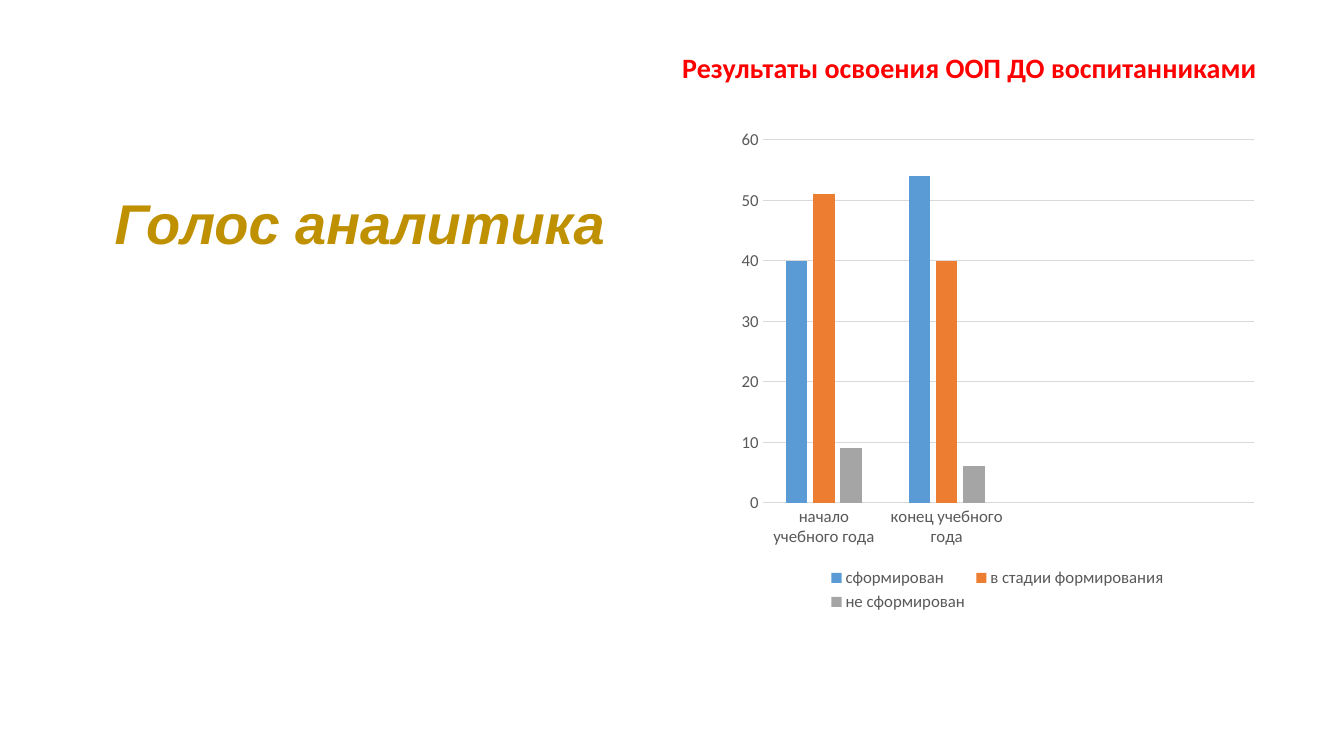
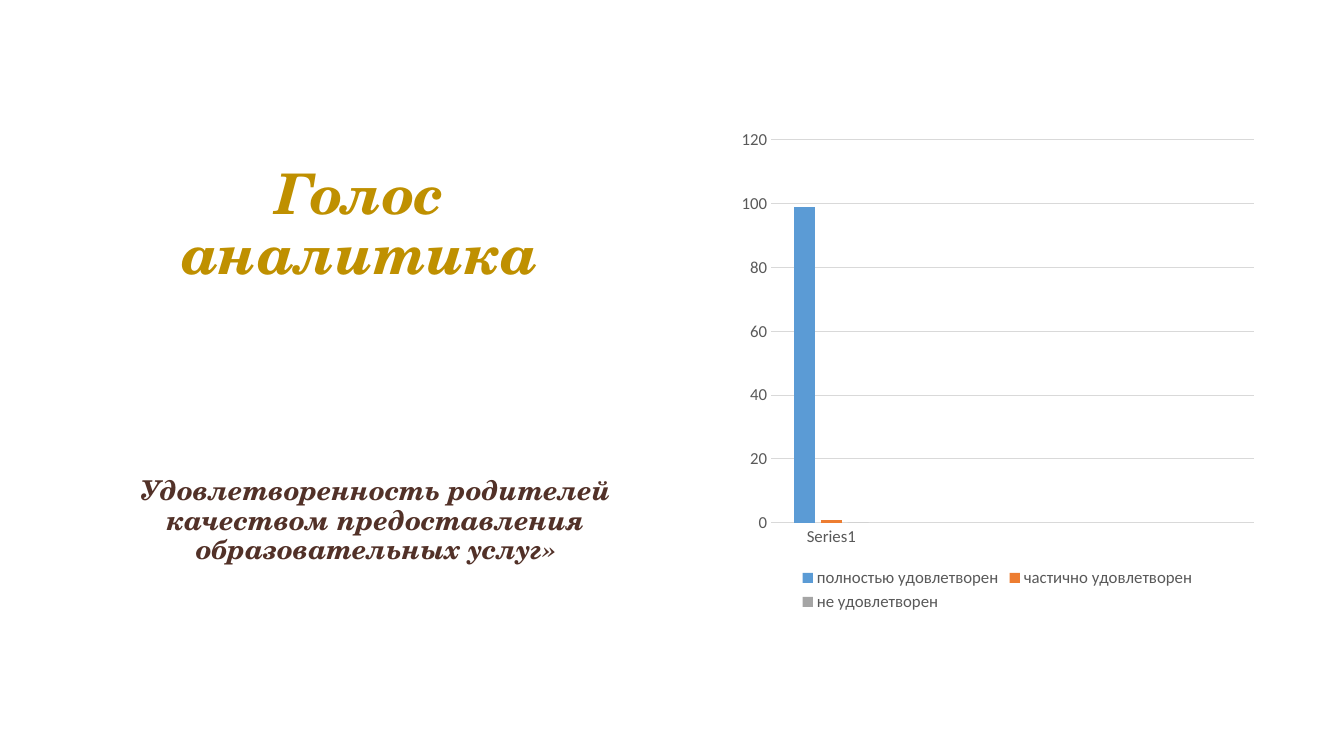
from lxml import etree
from pptx import Presentation
from pptx import util as u
from pptx.chart import data
from pptx.dml.color import RGBColor
from pptx.enum import chart as charts, text
from pptx.oxml import ns

COLOURS = {
    "title": "BF9000",
    "outline": "5A4012",
    "subtitle": "523128",
    "heading": "FF0000",
    "axis": "595959",
    "grid": "D9D9D9",
}
SERIES_COLOURS = ["5B9BD5", "ED7D31", "A5A5A5"]


def rgb(name):
    return RGBColor.from_string(COLOURS.get(name, name))


class Deck:
    body_font = "Calibri"
    panel_width, panel_height = u.Cm(14.12), u.Cm(3.68)

    def __init__(self):
        self.presentation = Presentation()
        self.presentation.slide_width = u.Cm(33.87)
        self.presentation.slide_height = u.Cm(19.05)
        self.slide = None

    def add_slide(self):
        layout = self.presentation.slide_layouts[6]
        self.slide = self.presentation.slides.add_slide(layout)

    def add_text(self, left, top, width, height, words, font, size, colour):
        shape = self.slide.shapes.add_textbox(left, top, width, height)
        paragraph = shape.text_frame.paragraphs[0]
        run = paragraph.add_run()
        run.text = words
        run.font.name = font
        run.font.size = u.Pt(size)
        run.font.bold = True
        run.font.color.rgb = rgb(colour)
        return shape.text_frame, paragraph, run

    def add_panel(self, left, top, words, font, size, colour):
        frame, paragraph, run = self.add_text(
            left, top, self.panel_width, self.panel_height, words, font, size, colour)
        frame.word_wrap = True
        frame.vertical_anchor = text.MSO_ANCHOR.MIDDLE
        paragraph.alignment = text.PP_ALIGN.CENTER
        paragraph.line_spacing = 0.9
        run.font.italic = True
        line = etree.Element(ns.qn("a:ln"), w=str(u.Pt(0.5)))
        fill = etree.SubElement(line, ns.qn("a:solidFill"))
        etree.SubElement(fill, ns.qn("a:srgbClr"), val=COLOURS["outline"])
        run.font._element.insert(0, line)

    def add_title(self, font):
        self.add_panel(u.Cm(2.01), u.Cm(3.86), "Голос аналитика", font, 40, "title")

    def add_heading(self, words):
        frame, _, _ = self.add_text(
            u.Cm(16.94), u.Cm(1.14), u.Cm(15.24), u.Cm(1.12),
            words, self.body_font, 20, "heading")
        frame.word_wrap = False
        frame.auto_size = text.MSO_AUTO_SIZE.SHAPE_TO_FIT_TEXT

    def style_font(self, font, size=12):
        font.name = self.body_font
        font.size = u.Pt(size)
        font.color.rgb = rgb("axis")

    def style_line(self, line):
        line.color.rgb = rgb("grid")
        line.width = u.Pt(0.75)

    def add_chart(self, categories, series_values):
        chart_data = data.CategoryChartData()
        chart_data.categories = categories
        for name, values in series_values.items():
            gaps = [None] * (len(categories) - len(values))
            chart_data.add_series(name, values + gaps)
        chart = self.slide.shapes.add_chart(
            charts.XL_CHART_TYPE.COLUMN_CLUSTERED,
            u.Cm(18.42), u.Cm(3.02), u.Cm(13.44), u.Cm(12.5), chart_data).chart
        self.style_font(chart.font, 10)
        chart.has_title = False
        chart.has_legend = True
        chart.legend.position = charts.XL_LEGEND_POSITION.BOTTOM
        chart.legend.include_in_layout = False
        self.style_font(chart.legend.font)
        for axis in (chart.category_axis, chart.value_axis):
            axis.major_tick_mark = charts.XL_TICK_MARK.NONE
            axis.minor_tick_mark = charts.XL_TICK_MARK.NONE
            self.style_font(axis.tick_labels.font)
        self.style_line(chart.category_axis.format.line)
        chart.value_axis.format.line.fill.background()
        self.style_line(chart.value_axis.major_gridlines.format.line)
        plot = chart.plots[0]
        plot.gap_width = 219
        plot.overlap = -27
        plot.vary_by_categories = False
        for series, colour in zip(plot.series, SERIES_COLOURS):
            series.format.fill.solid()
            series.format.fill.fore_color.rgb = rgb(colour)


def main():
    deck = Deck()

    deck.add_slide()
    deck.add_title("Arial")
    deck.add_chart(
        ["начало учебного года", "конец учебного года", "", ""],
        {
            "сформирован": [40, 54],
            "в стадии формирования": [51, 40],
            "не сформирован": [9, 6],
        })
    deck.add_heading("Результаты освоения ООП ДО воспитанниками")

    serif = "TeX Gyre Schola"
    deck.add_slide()
    deck.add_title(serif)
    deck.add_panel(
        u.Cm(2.41), u.Cm(11.3),
        "Удовлетворенность родителей качеством предоставления образовательных услуг»",
        serif, 19.5, "subtitle")
    deck.add_chart(
        ["Series1", "", "", ""],
        {
            "полностью удовлетворен": [99],
            "частично удовлетворен": [1],
            "не удовлетворен": [0],
        })

    deck.presentation.save("out.pptx")


if __name__ == "__main__":
    main()
